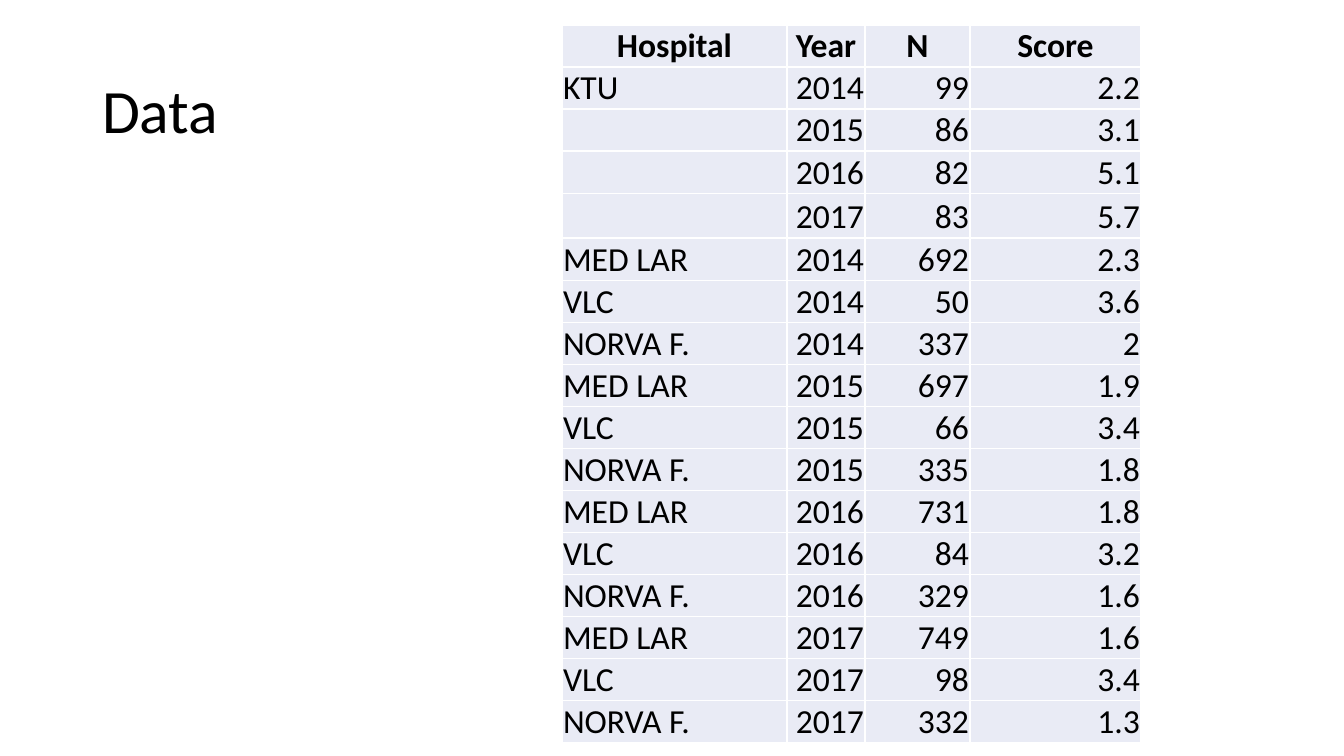
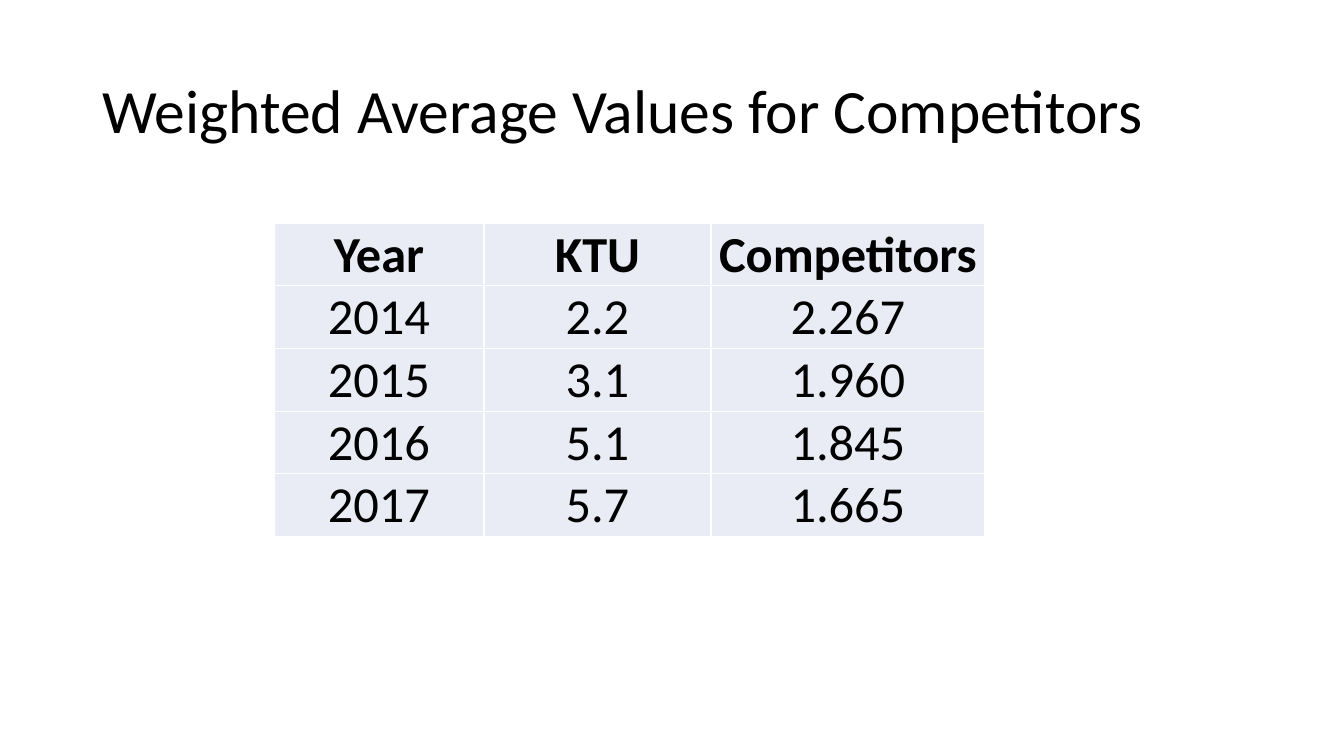
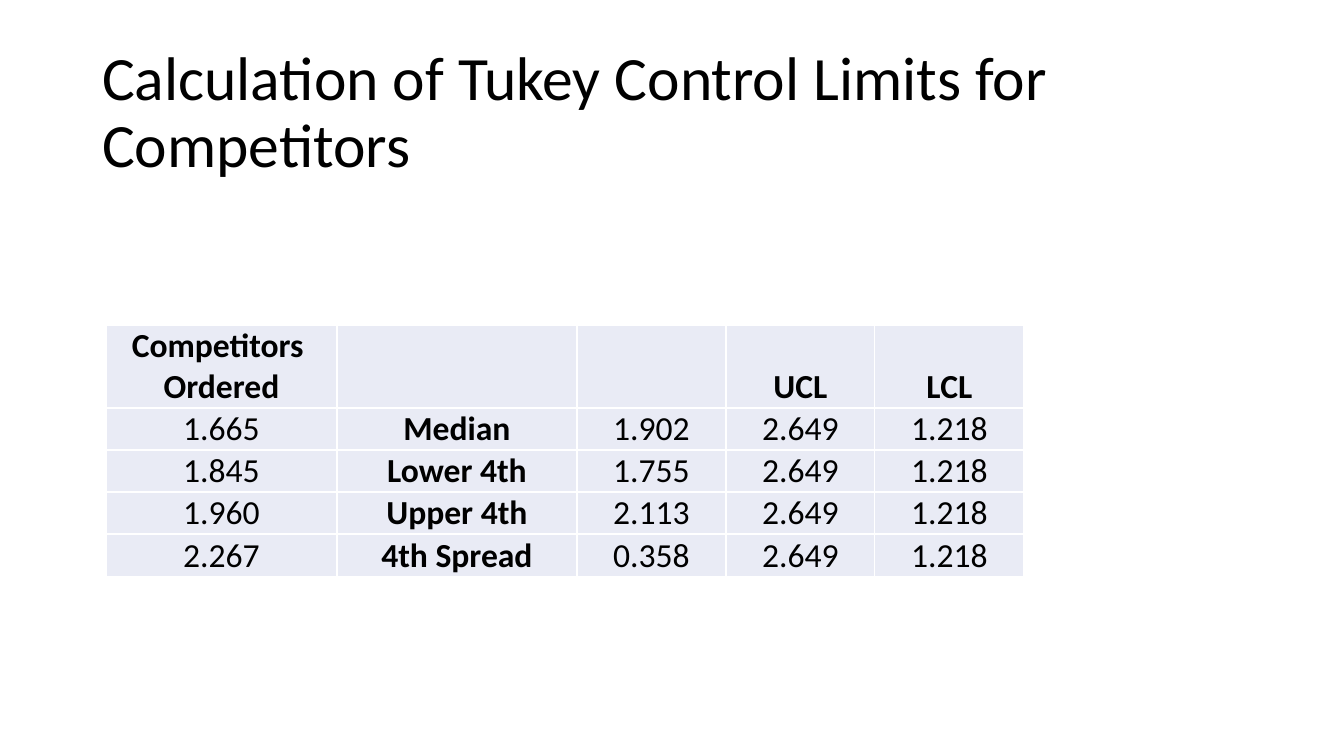
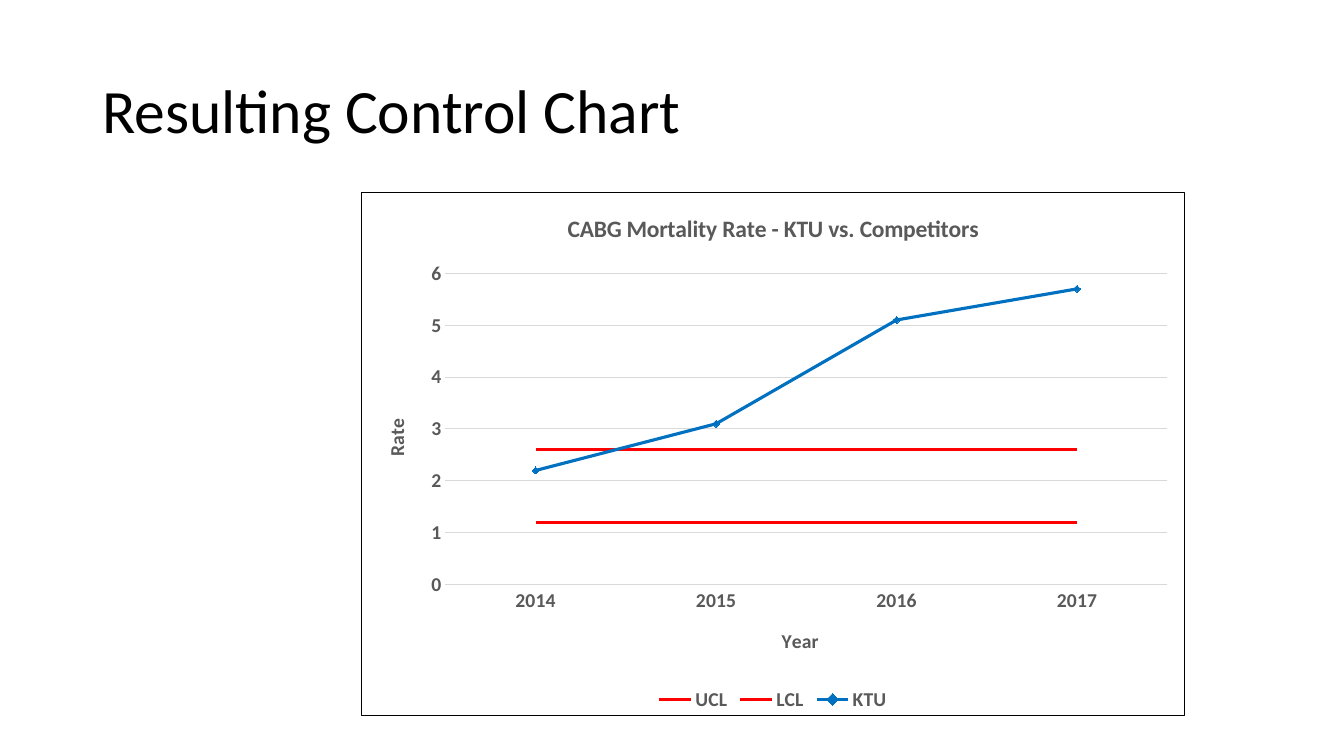
from lxml import etree
from pptx import Presentation
from pptx.chart.data import CategoryChartData
from pptx.dml.color import RGBColor
from pptx.enum.chart import (XL_CHART_TYPE, XL_LEGEND_POSITION,
                             XL_MARKER_STYLE, XL_TICK_MARK)
from pptx.enum.text import MSO_ANCHOR, MSO_AUTO_SIZE, PP_ALIGN
from pptx.oxml import parse_xml
from pptx.oxml.ns import nsdecls, qn
from pptx.util import Pt

# Shared style
EMU_PER_PX = 12192000 / 1344
FONT = "Calibri"
BLACK, GREY, GRID = "000000", "595959", "D9D9D9"
CELL_FILL = "E9EBF5"
LIMIT_RED, RATE_BLUE, MARKER_BLUE = "FF0000", "0070C0", "4472C4"
TITLE_BOX = (92, 41, 1159, 146)
LEFT, CENTER, RIGHT = PP_ALIGN.LEFT, PP_ALIGN.CENTER, PP_ALIGN.RIGHT

# Slide contents
HOSPITAL_ROWS = [
    ("Hospital", "Year", "N", "Score"),
    ("KTU", "2014", "99", "2.2"),
    ("", "2015", "86", "3.1"),
    ("", "2016", "82", "5.1"),
    ("", "2017", "83", "5.7"),
    ("MED LAR", "2014", "692", "2.3"),
    ("VLC", "2014", "50", "3.6"),
    ("NORVA F.", "2014", "337", "2"),
    ("MED LAR", "2015", "697", "1.9"),
    ("VLC", "2015", "66", "3.4"),
    ("NORVA F.", "2015", "335", "1.8"),
    ("MED LAR", "2016", "731", "1.8"),
    ("VLC", "2016", "84", "3.2"),
    ("NORVA F.", "2016", "329", "1.6"),
    ("MED LAR", "2017", "749", "1.6"),
    ("VLC", "2017", "98", "3.4"),
    ("NORVA F.", "2017", "332", "1.3"),
]
AVERAGE_ROWS = [
    ("Year", "KTU", "Competitors"),
    ("2014", "2.2", "2.267"),
    ("2015", "3.1", "1.960"),
    ("2016", "5.1", "1.845"),
    ("2017", "5.7", "1.665"),
]
LIMIT_ROWS = [("Competitors \vOrdered", "", "", "UCL", "LCL")] + [
    (ordered, label, value, "2.649", "1.218")
    for ordered, label, value in [
        ("1.665", "Median", "1.902"),
        ("1.845", "Lower 4th", "1.755"),
        ("1.960", "Upper 4th", "2.113"),
        ("2.267", "4th Spread", "0.358"),
    ]
]
YEARS = ("2014", "2015", "2016", "2017")
SERIES = [
    ("UCL", [2.6] * 4, LIMIT_RED),
    ("LCL", [1.2] * 4, LIMIT_RED),
    ("KTU", [2.2, 3.1, 5.1, 5.7], RATE_BLUE),
]


def px(n):
    return round(n * EMU_PER_PX)


def color(hex_string):
    return RGBColor.from_string(hex_string)


def set_font(font, size, hex_string=BLACK, bold=False):
    font.name, font.size, font.bold = FONT, Pt(size), bold
    font.color.rgb = color(hex_string)


def set_line(line, hex_string, width):
    line.color.rgb = color(hex_string)
    line.width = Pt(width)


def add_titled_slide(prs, text):
    """Title-only slide with the shared title style."""
    s = prs.slides.add_slide(prs.slide_layouts[5])
    sp = s.shapes.title
    sp.left, sp.top, sp.width, sp.height = map(px, TITLE_BOX)
    tf = sp.text_frame
    tf.text = text
    tf.word_wrap = True
    tf.auto_size = MSO_AUTO_SIZE.NONE
    tf.vertical_anchor = MSO_ANCHOR.MIDDLE
    p = tf.paragraphs[0]
    p.alignment, p.line_spacing = LEFT, 0.9
    set_font(p.font, 44)
    return s


def add_data_table(s, left, top, widths, heights, rows, size, aligns,
                   bold_cols=()):
    """Plain tinted table; the header row is centred and bold."""
    frame = s.shapes.add_table(len(rows), len(widths), px(left), px(top),
                               px(sum(widths)), px(sum(heights)))
    table = frame.table
    table.first_row = table.horz_banding = False
    for col, width in zip(table.columns, widths):
        col.width = px(width)
    for row, height in zip(table.rows, heights):
        row.height = px(height)
    for i, values in enumerate(rows):
        for j, value in enumerate(values):
            cell = table.cell(i, j)
            cell.fill.solid()
            cell.fill.fore_color.rgb = color(CELL_FILL)
            cell.margin_left = cell.margin_right = cell.margin_top = px(1)
            cell.margin_bottom = 0
            cell.vertical_anchor = MSO_ANCHOR.BOTTOM
            cell.text = value
            header = i == 0
            for p in cell.text_frame.paragraphs:
                p.alignment = CENTER if header else aligns[j]
                set_font(p.font, size, bold=header or j in bold_cols)


def place_in_chart(element, index, box, offset, extent=None):
    """Fix a chart part at an offset (px) within the chart box."""
    for old in element.findall(qn("c:layout")):
        element.remove(old)
    layout = parse_xml(f"<c:layout {nsdecls('c')}><c:manualLayout/></c:layout>")
    settings = [("xMode", "edge"), ("yMode", "edge"),
                ("x", offset[0] / box[2]), ("y", offset[1] / box[3])]
    if extent:
        settings.insert(0, ("layoutTarget", "inner"))
        settings += [("w", extent[0] / box[2]), ("h", extent[1] / box[3])]
    for tag, value in settings:
        val = value if isinstance(value, str) else f"{value:.4f}"
        etree.SubElement(layout[0], qn("c:" + tag)).set("val", val)
    element.insert(index, layout)


def set_chart_title(owner, text, size):
    tf = owner.text_frame
    tf.text = text
    set_font(tf.paragraphs[0].font, size, GREY, True)


def add_control_chart(s, box):
    """Line chart of the yearly rate between its control limits."""
    data = CategoryChartData()
    data.categories = YEARS
    for name, values, _ in SERIES:
        data.add_series(name, values)
    chart = s.shapes.add_chart(XL_CHART_TYPE.LINE_MARKERS, *map(px, box),
                               data).chart
    set_font(chart.font, 14, BLACK, True)
    set_chart_title(chart.chart_title, "CABG Mortality Rate - KTU vs. Competitors",
                    16.8)
    chart.chart_title.include_in_layout = False

    # Frame
    chart_space = chart.element
    chart_space.find(qn("c:chart")).addnext(parse_xml(
        f"<c:spPr {nsdecls('c', 'a')}>"
        '<a:solidFill><a:srgbClr val="FFFFFF"/></a:solidFill>'
        f'<a:ln w="9525"><a:solidFill><a:srgbClr val="{BLACK}"/></a:solidFill>'
        "</a:ln></c:spPr>"))

    # Series
    plot = chart.plots[0]
    plot.vary_by_categories = False
    for series, (name, _, hex_string) in zip(plot.series, SERIES):
        series.smooth = False
        set_line(series.format.line, hex_string, 2.25)
        marker = series.marker
        marker.style = XL_MARKER_STYLE.NONE
        if name == "KTU":
            marker.style, marker.size = XL_MARKER_STYLE.DIAMOND, 5
            marker.format.fill.solid()
            marker.format.fill.fore_color.rgb = color(MARKER_BLUE)
            set_line(marker.format.line, RATE_BLUE, 0.75)

    # Axes
    rate, year = chart.value_axis, chart.category_axis
    for axis, text, offset in ((year, "Year", (417, 432)),
                               (rate, "Rate", (18, 223))):
        set_chart_title(axis.axis_title, text, 14)
        place_in_chart(axis.axis_title.element, 1, box, offset)
        axis.major_tick_mark = axis.minor_tick_mark = XL_TICK_MARK.NONE
        set_font(axis.tick_labels.font, 14, GREY, True)
    set_line(year.format.line, GRID, 0.75)
    rate.format.line.fill.background()
    set_line(rate.major_gridlines.format.line, GRID, 0.75)
    rate.minimum_scale, rate.maximum_scale, rate.major_unit = 0, 6, 1

    # Legend and plot area
    chart.has_legend = True
    chart.legend.position = XL_LEGEND_POSITION.BOTTOM
    chart.legend.include_in_layout = False
    set_font(chart.legend.font, 14, GREY, True)
    plot_area = chart_space.find(qn("c:chart")).find(qn("c:plotArea"))
    place_in_chart(plot_area, 0, box, (84, 81), (723, 312))


def main():
    prs = Presentation()
    prs.slide_width, prs.slide_height = px(1344), px(756)

    s = add_titled_slide(prs, "Data")
    add_data_table(s, 562, 25, (225, 78, 105, 171),
                   [42] * 4 + [45] + [42] * 12, HOSPITAL_ROWS, 24,
                   (LEFT, RIGHT, RIGHT, RIGHT))

    s = add_titled_slide(prs, "Weighted Average Values for Competitors")
    add_data_table(s, 274, 223, (210, 227, 274), [62] * 5, AVERAGE_ROWS, 36,
                   [CENTER] * 3)

    s = add_titled_slide(prs, "Calculation of Tukey Control Limits for Competitors")
    add_data_table(s, 106, 325, (231, 240, 149, 149, 149), [83] + [42] * 4,
                   LIMIT_ROWS, 24, [CENTER] * 5, bold_cols=(1,))

    s = add_titled_slide(prs, "Resulting Control Chart")
    add_control_chart(s, (361, 192, 824, 524))

    prs.save("out.pptx")


if __name__ == "__main__":
    main()
